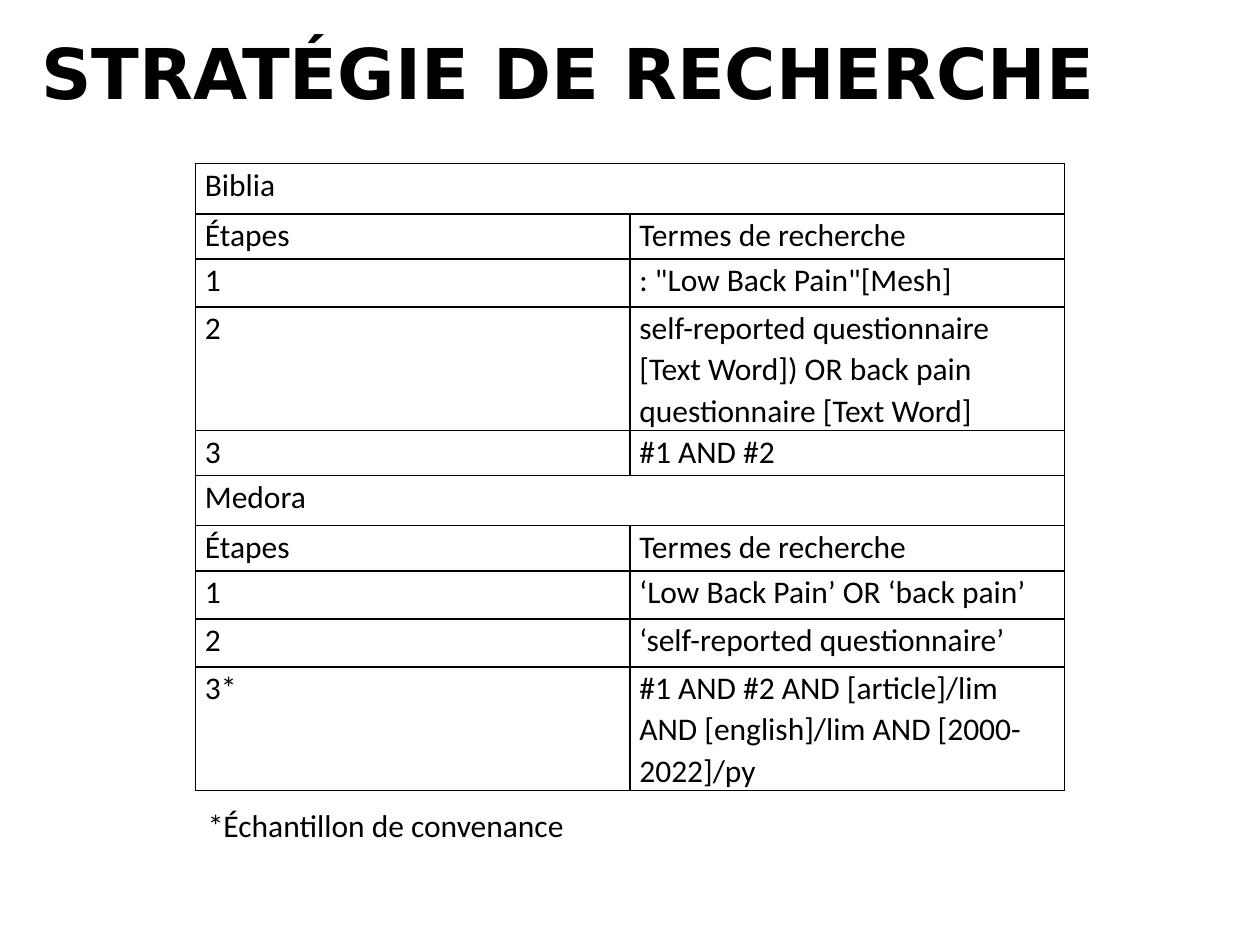
from lxml import etree
from pptx import Presentation
from pptx import util as u
from pptx.dml.color import RGBColor
from pptx.enum import text
from pptx.oxml import ns

COLORS = {"ink": "000000", "background": "FFFFFF"}
TITLE = "STRATÉGIE DE RECHERCHE"
NOTE = "*Échantillon de convenance"
HEADINGS = ("Étapes", "Termes de recherche")
SEARCHES = [
    ("Biblia", [
        ("1", ': "Low Back Pain"[Mesh]', 0.97),
        ("2", "self-reported questionnaire [Text Word]) OR back pain "
              "questionnaire [Text Word]", 2.48),
        ("3", "#1 AND #2", 0.91),
    ]),
    ("Medora", [
        ("1", "‘Low Back Pain’ OR ‘back pain’", 0.97),
        ("2", "‘self-reported questionnaire’", 0.97),
        ("3*", "#1 AND #2 AND [article]/lim AND [english]/lim AND [2000-2022]/py", 2.48),
    ]),
]
DATABASE_HEIGHT, HEADING_HEIGHT = 1.01, 0.91
TABLE_LEFT, TABLE_TOP, COLUMN_WIDTH = 3.94, 3.3, 8.76


def set_font(paragraph, name, size, bold=False):
    paragraph.font.name = name
    paragraph.font.size = u.Pt(size)
    paragraph.font.bold = bold
    paragraph.font.color.rgb = RGBColor.from_string(COLORS["ink"])


def add_borders(cell):
    properties = cell._tc.get_or_add_tcPr()
    for position, side in enumerate(("lnL", "lnR", "lnT", "lnB")):
        line = etree.Element(ns.qn(f"a:{side}"), w=str(u.Pt(1)))
        fill = etree.SubElement(line, ns.qn("a:solidFill"))
        etree.SubElement(fill, ns.qn("a:srgbClr"), val=COLORS["ink"])
        properties.insert(position, line)


def fill_cell(cell, content):
    cell.margin_left = cell.margin_right = u.Cm(0.19)
    cell.margin_top = cell.margin_bottom = 0
    cell.fill.background()
    add_borders(cell)
    paragraph = cell.text_frame.paragraphs[0]
    paragraph.text = content
    paragraph.line_spacing = 1.07
    paragraph.space_after = u.Pt(8)
    set_font(paragraph, "Calibri", 18)


def add_title(slide):
    title = slide.shapes.title
    title.left, title.top, title.width, title.height = map(u.Cm, (0.84, 1.45, 23.7, 2.74))
    frame = title.text_frame
    frame.margin_left = frame.margin_right = frame.margin_top = frame.margin_bottom = 0
    frame.vertical_anchor = text.MSO_ANCHOR.TOP
    frame.auto_size = text.MSO_AUTO_SIZE.NONE
    frame.text = TITLE
    paragraph = frame.paragraphs[0]
    paragraph.alignment = text.PP_ALIGN.LEFT
    paragraph.line_spacing = u.Pt(24)
    set_font(paragraph, "DejaVu Sans", 40, bold=True)


def add_search_table(slide):
    rows = []
    for database, steps in SEARCHES:
        rows += [(database, "", DATABASE_HEIGHT), (*HEADINGS, HEADING_HEIGHT), *steps]
    total_height = sum(height for _, _, height in rows)
    table = slide.shapes.add_table(
        len(rows), 2, u.Cm(TABLE_LEFT), u.Cm(TABLE_TOP),
        u.Cm(2 * COLUMN_WIDTH), u.Cm(total_height)).table
    table.first_row = table.horz_banding = False
    for column in table.columns:
        column.width = u.Cm(COLUMN_WIDTH)
    for index, (step, terms, height) in enumerate(rows):
        table.rows[index].height = u.Cm(height)
        fill_cell(table.cell(index, 0), step)
        fill_cell(table.cell(index, 1), terms)
        if not terms:
            table.cell(index, 0).merge(table.cell(index, 1))


def add_note(slide):
    box = slide.shapes.add_textbox(u.Cm(TABLE_LEFT), u.Cm(16.13), u.Cm(16.76), u.Cm(1.02))
    box.text_frame.word_wrap = True
    paragraph = box.text_frame.paragraphs[0]
    paragraph.text = NOTE
    set_font(paragraph, "Calibri", 18)


def main():
    presentation = Presentation()
    presentation.slide_width, presentation.slide_height = u.Cm(25.4), u.Cm(19.05)
    slide = presentation.slides.add_slide(presentation.slide_layouts.get_by_name("Title Only"))
    slide.background.fill.solid()
    slide.background.fill.fore_color.rgb = RGBColor.from_string(COLORS["background"])
    add_title(slide)
    add_search_table(slide)
    add_note(slide)
    presentation.save("out.pptx")


if __name__ == "__main__":
    main()
